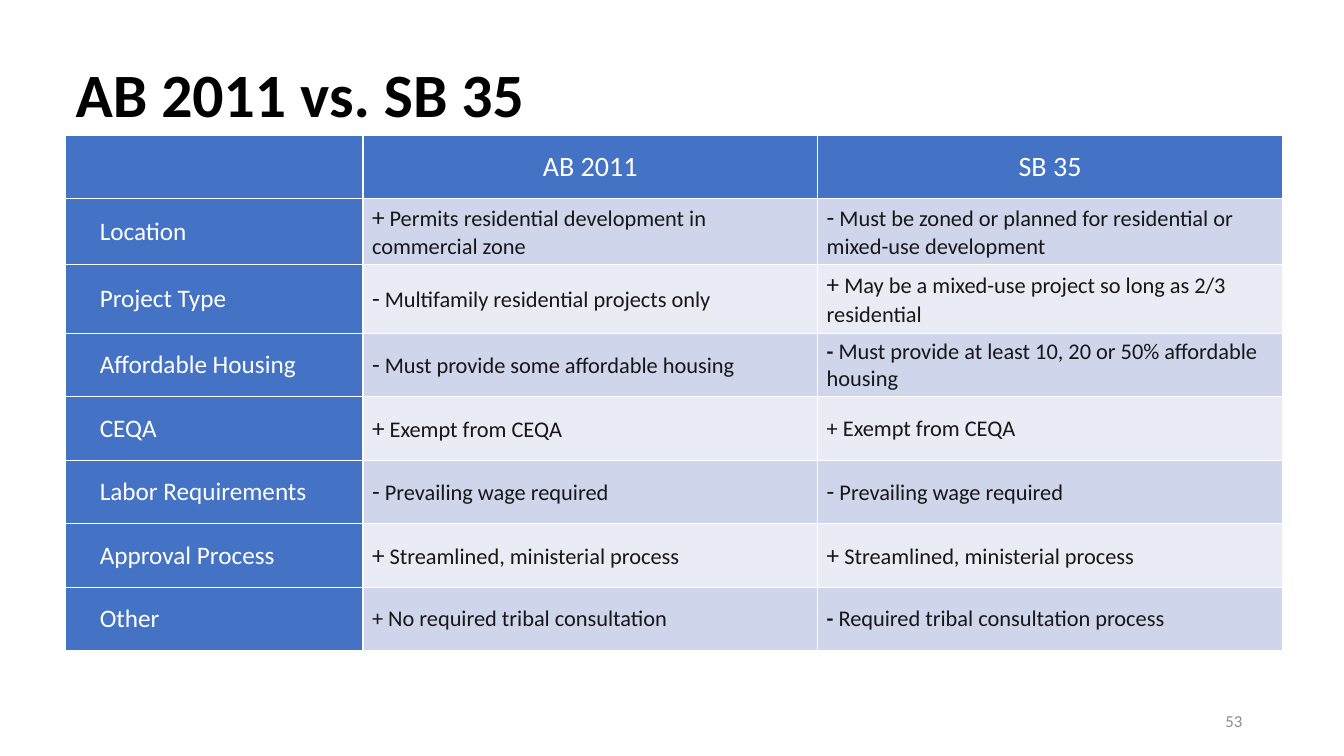
from lxml import etree
from pptx import Presentation
from pptx.dml.color import RGBColor
from pptx.enum.text import MSO_ANCHOR, MSO_AUTO_SIZE, PP_ALIGN
from pptx.oxml.ns import qn
from pptx.util import Emu, Pt

MIDDLE = MSO_ANCHOR.MIDDLE
NO_FIT = MSO_AUTO_SIZE.NONE
LEFT, CENTER, RIGHT = PP_ALIGN.LEFT, PP_ALIGN.CENTER, PP_ALIGN.RIGHT

BLACK = RGBColor(0x00, 0x00, 0x00)
WHITE = RGBColor(0xFF, 0xFF, 0xFF)
BLUE = RGBColor(0x44, 0x72, 0xC4)
BAND_DARK = RGBColor(0xCF, 0xD5, 0xEA)
BAND_LIGHT = RGBColor(0xE9, 0xEB, 0xF5)
INK = RGBColor(0x18, 0x17, 0x17)
GRAY = RGBColor(0x8C, 0x8C, 0x8C)

EMU_PER_PX = 9144  # 100 px to the inch

HEADERS = ["", "AB 2011", "SB 35"]
COL_WIDTHS = [295, 451, 461]
ROW_HEIGHTS = [63, 61, 68] + [63] * 5

# Styles of the sign that opens each entry
LARGE = {"size": 18}
SMALL = {"size": 16}
STRONG = {"size": 16, "bold": True}

# Topic, then (sign, sign style, text) for each bill
ROWS = [
    ("Location",
     ("+", LARGE, "Permits residential development in commercial zone"),
     ("-", LARGE, "Must be zoned or planned for residential or mixed-use development")),
    ("Project Type",
     ("-", LARGE, "Multifamily residential projects only"),
     ("+", LARGE, "May be a mixed-use project so long as 2/3 residential")),
    ("Affordable Housing",
     ("-", LARGE, "Must provide some affordable housing"),
     ("-", STRONG, "Must provide at least 10, 20 or 50% affordable housing")),
    ("CEQA",
     ("+", LARGE, "Exempt from CEQA"),
     ("+", SMALL, "Exempt from CEQA")),
    ("Labor Requirements",
     ("-", LARGE, "Prevailing wage required"),
     ("-", LARGE, "Prevailing wage required")),
    ("Approval Process",
     ("+", LARGE, "Streamlined, ministerial process"),
     ("+", LARGE, "Streamlined, ministerial process")),
    ("Other",
     ("+", SMALL, "No required tribal consultation"),
     ("-", STRONG, "Required tribal consultation process")),
]


def px(n):
    return Emu(n * EMU_PER_PX)


class SlideBuilder:
    def __init__(self, slide, font="Calibri"):
        self.slide = slide
        self.font = font

    def add_runs(self, p, runs, align=LEFT):
        """Add (text, format) runs to a paragraph."""
        p.alignment = align
        for text, fmt in runs:
            r = p.add_run()
            r.text = text
            values = {"name": self.font, "bold": False, **fmt}
            values["size"] = Pt(values["size"])
            r.font.color.rgb = values.pop("color")
            for name, value in values.items():
                setattr(r.font, name, value)

    def frame(self, sp, runs, align):
        tf = sp.text_frame
        for name, value in {"word_wrap": True, "auto_size": NO_FIT,
                            "vertical_anchor": MIDDLE}.items():
            setattr(tf, name, value)
        self.add_runs(tf.paragraphs[0], runs, align)
        return tf

    def title(self, box, text):
        sp = self.slide.shapes.title
        sp.left, sp.top, sp.width, sp.height = map(px, box)
        fmt = {"size": 44, "bold": True, "color": BLACK}
        tf = self.frame(sp, [(text, fmt)], LEFT)
        tf.paragraphs[0].line_spacing = 0.9

    def text(self, box, text, fmt, align):
        sp = self.slide.shapes.add_textbox(*map(px, box))
        self.frame(sp, [(text, fmt)], align)

    def table(self, left, top, widths, heights):
        size = px(sum(widths)), px(sum(heights))
        frame = self.slide.shapes.add_table(
            len(heights), len(widths), px(left), px(top), *size)
        table = frame.table
        table.first_row = table.horz_banding = False
        for col, width in zip(table.columns, widths):
            col.width = px(width)
        for row, height in zip(table.rows, heights):
            row.height = px(height)
        return table

    def cell(self, cell, fill, runs, align=LEFT, margin_left=9):
        self.borders(cell)
        cell.fill.solid()
        cell.fill.fore_color.rgb = fill
        for name, value in {"vertical_anchor": MIDDLE,
                            "margin_left": px(margin_left), "margin_right": px(9),
                            "margin_top": px(4), "margin_bottom": px(4)}.items():
            setattr(cell, name, value)
        self.add_runs(cell.text_frame.paragraphs[0], runs, align)

    def borders(self, cell):
        tc_pr = cell._tc.get_or_add_tcPr()
        for side in ("a:lnL", "a:lnR", "a:lnT", "a:lnB"):
            ln = etree.SubElement(tc_pr, qn(side), w=str(Pt(1)))
            solid = etree.SubElement(ln, qn("a:solidFill"))
            etree.SubElement(solid, qn("a:srgbClr"), val=str(WHITE))


def main():
    prs = Presentation()
    prs.slide_width, prs.slide_height = px(1333), px(750)
    s = SlideBuilder(prs.slides.add_slide(prs.slide_layouts[5]))

    # Title
    s.title((65, 24, 1228, 145), "AB 2011 vs. SB 35")

    # Table header
    table = s.table(65, 134, COL_WIDTHS, ROW_HEIGHTS)
    for col, name in enumerate(HEADERS):
        runs = [(name, {"size": 20, "color": WHITE})] if name else []
        s.cell(table.cell(0, col), BLUE, runs, CENTER)

    # Comparison rows
    for row, (topic, *entries) in enumerate(ROWS, 1):
        s.cell(table.cell(row, 0), BLUE,
               [(topic, {"size": 18, "color": WHITE})], margin_left=34)
        band = BAND_DARK if row % 2 else BAND_LIGHT
        for col, (sign, style, text) in enumerate(entries, 1):
            runs = [(sign, {**style, "color": INK}),
                    (" " + text, {**SMALL, "color": INK})]
            s.cell(table.cell(row, col), band, runs)

    # Slide number
    s.text((942, 695, 300, 40), "53", {"size": 12, "color": GRAY}, RIGHT)

    prs.save("out.pptx")


if __name__ == "__main__":
    main()
